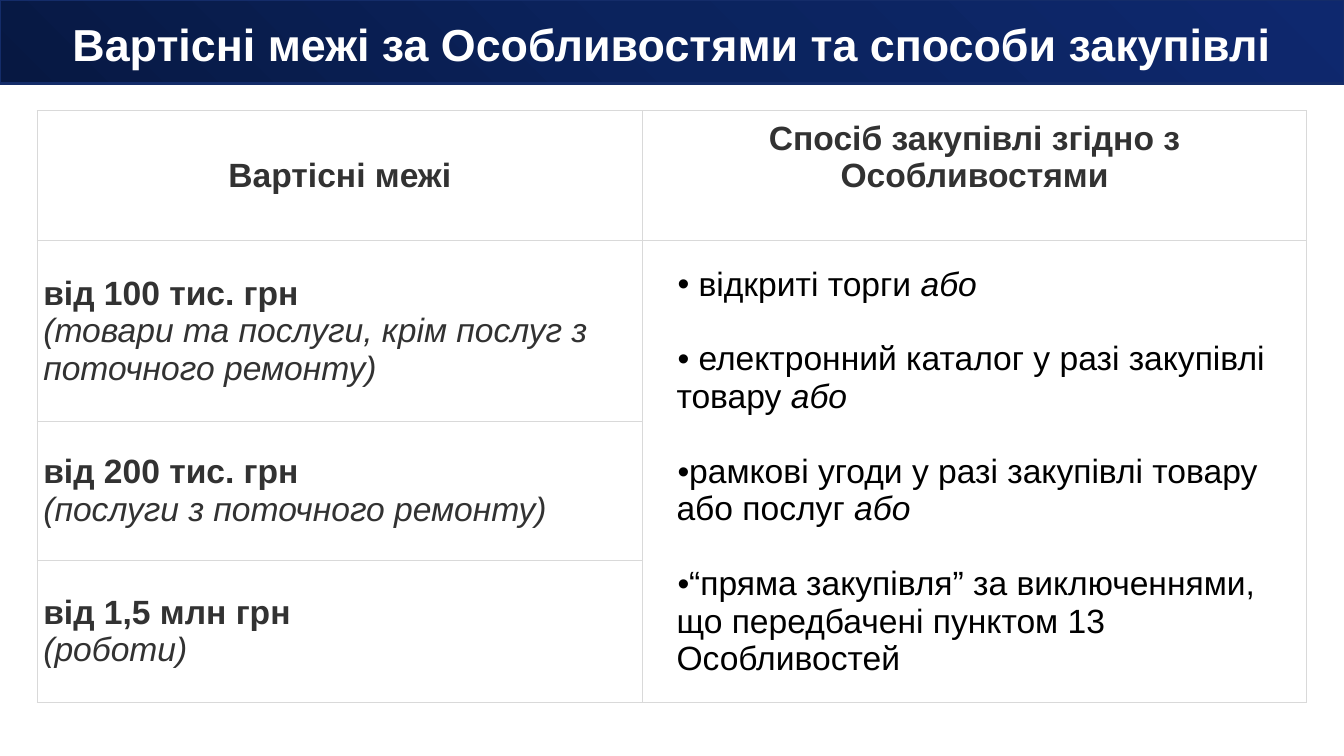
from copy import deepcopy

from lxml import etree
from pptx import Presentation
from pptx.dml.color import RGBColor
from pptx.enum.text import MSO_ANCHOR, MSO_AUTO_SIZE, PP_ALIGN
from pptx.oxml import parse_xml
from pptx.oxml.ns import nsdecls, qn
from pptx.util import Inches, Pt

CENTER, LEFT = PP_ALIGN.CENTER, PP_ALIGN.LEFT
MIDDLE = MSO_ANCHOR.MIDDLE
NO_AUTOFIT = MSO_AUTO_SIZE.NONE

TITLE = "Вартісні межі за Особливостями та способи закупівлі"
HEADERS = ["Вартісні межі", "Спосіб закупівлі згідно з Особливостями"]
LIMITS = [
    ("від 100 тис. грн", "(товари та послуги, крім послуг з поточного ремонту)"),
    ("від 200 тис. грн", "(послуги з поточного ремонту)"),
    ("від 1,5 млн грн", "(роботи)"),
]
METHODS = [
    (" відкриті торги ", "або"),
    (" електронний каталог у разі закупівлі товару ", "або"),
    ("рамкові угоди у разі закупівлі товару або послуг ", "або"),
    ("“пряма закупівля” за виключеннями, що передбачені пунктом 13 Особливостей", ""),
]

FONT = "Arial"
WHITE, BLACK, DARK_GREY, BORDER = "FFFFFF", "000000", "323232", "D9D9D9"
TITLE_LINE = "142C69"
TITLE_GRADIENT = [(0, "071842"), (0.5, "0B235D"), (1, "0E286E")]
SLIDE_W, SLIDE_H = 13.33, 7.5
TITLE_H = 0.83
TABLE_LEFT, TABLE_TOP = 0.37, 1.1
COL_WIDTHS = [6, 6.59]
ROW_HEIGHTS = [1.29, 1.79, 1.38, 1.41]
TEXT_SIZE = 24
LINE_HEIGHT = 26.8  # points, one line of table text


def rgb(value):
    return RGBColor.from_string(value)


def add_run(paragraph, text, color, size=TEXT_SIZE, bold=False, italic=False):
    run = paragraph.add_run()
    run.text = text
    run.font.name = FONT
    run.font.size = Pt(size)
    run.font.bold = bold
    run.font.italic = italic
    run.font.color.rgb = rgb(color)


def paragraph_at(frame, index):
    return frame.paragraphs[0] if index == 0 else frame.add_paragraph()


def add_bullet(paragraph):
    properties = paragraph._p.get_or_add_pPr()
    properties.set("marL", str(Inches(0.28)))
    properties.set("indent", str(Inches(0.01)))
    for xml in (
        f'<a:buClr {nsdecls("a")}><a:srgbClr val="{BLACK}"/></a:buClr>',
        f'<a:buFont {nsdecls("a")} typeface="{FONT}"/>',
        f'<a:buChar {nsdecls("a")} char="•"/>',
        f'<a:tabLst {nsdecls("a")}><a:tab pos="{Inches(0.1)}" algn="l"/></a:tabLst>',
    ):
        properties.append(parse_xml(xml))


def style_cell(cell):
    cell.fill.background()
    cell.vertical_anchor = MIDDLE
    cell.margin_left = cell.margin_right = Inches(0.06)
    cell.margin_top = cell.margin_bottom = Inches(0.05)
    properties = cell._tc.get_or_add_tcPr()
    for position, side in enumerate(("lnL", "lnR", "lnT", "lnB")):
        border = etree.Element(qn(f"a:{side}"), w=str(Pt(0.75)))
        fill = etree.SubElement(border, qn("a:solidFill"))
        etree.SubElement(fill, qn("a:srgbClr"), val=BORDER)
        properties.insert(position, border)


def format_title(title):
    title.left, title.top = 0, 0
    title.width, title.height = Inches(SLIDE_W), Inches(TITLE_H)
    title.fill.gradient()
    title.fill.gradient_angle = 45
    stop_list = title._element.spPr.find(".//" + qn("a:gsLst"))
    stop_list.insert(1, deepcopy(stop_list[0]))
    for stop, (position, color) in zip(title.fill.gradient_stops, TITLE_GRADIENT):
        stop.position = position
        stop.color.rgb = rgb(color)
    title.line.color.rgb = rgb(TITLE_LINE)
    title.line.width = Pt(2)
    frame = title.text_frame
    frame.auto_size = NO_AUTOFIT
    frame.word_wrap = True
    frame.vertical_anchor = MIDDLE
    paragraph = frame.paragraphs[0]
    paragraph.alignment = CENTER
    paragraph.line_spacing = 1.07
    paragraph.space_after = Pt(8)
    add_run(paragraph, TITLE, WHITE, size=32, bold=True)


def add_limits_table(slide):
    table = slide.shapes.add_table(
        len(ROW_HEIGHTS), len(COL_WIDTHS), Inches(TABLE_LEFT), Inches(TABLE_TOP),
        Inches(sum(COL_WIDTHS)), Inches(sum(ROW_HEIGHTS))).table
    table.first_row = table.horz_banding = False
    for column, width in zip(table.columns, COL_WIDTHS):
        column.width = Inches(width)
    for row, height in zip(table.rows, ROW_HEIGHTS):
        row.height = Inches(height)
    for cell in table.iter_cells():
        style_cell(cell)

    for col, header in enumerate(HEADERS):
        paragraph = table.cell(0, col).text_frame.paragraphs[0]
        paragraph.alignment = CENTER
        add_run(paragraph, header, DARK_GREY, bold=True)
    # The second header sits half a line above the middle of its row
    table.cell(0, 1).margin_bottom = Inches(0.05) + Pt(LINE_HEIGHT)

    for row, (amount, subject) in enumerate(LIMITS, start=1):
        frame = table.cell(row, 0).text_frame
        add_run(paragraph_at(frame, 0), amount, DARK_GREY, bold=True)
        add_run(paragraph_at(frame, 1), subject, DARK_GREY, italic=True)

    methods_cell = table.cell(1, 1)
    methods_cell.merge(table.cell(len(LIMITS), 1))
    for index, (method, conjunction) in enumerate(METHODS):
        paragraph = paragraph_at(methods_cell.text_frame, index)
        paragraph.alignment = LEFT
        if index:
            paragraph.space_before = Pt(LINE_HEIGHT)
        add_bullet(paragraph)
        add_run(paragraph, method, BLACK)
        if conjunction:
            add_run(paragraph, conjunction, BLACK, italic=True)


def main():
    presentation = Presentation()
    presentation.slide_width = Inches(SLIDE_W)
    presentation.slide_height = Inches(SLIDE_H)
    slide = presentation.slides.add_slide(presentation.slide_layouts[5])
    format_title(slide.shapes.title)
    add_limits_table(slide)
    presentation.save("out.pptx")


if __name__ == "__main__":
    main()
